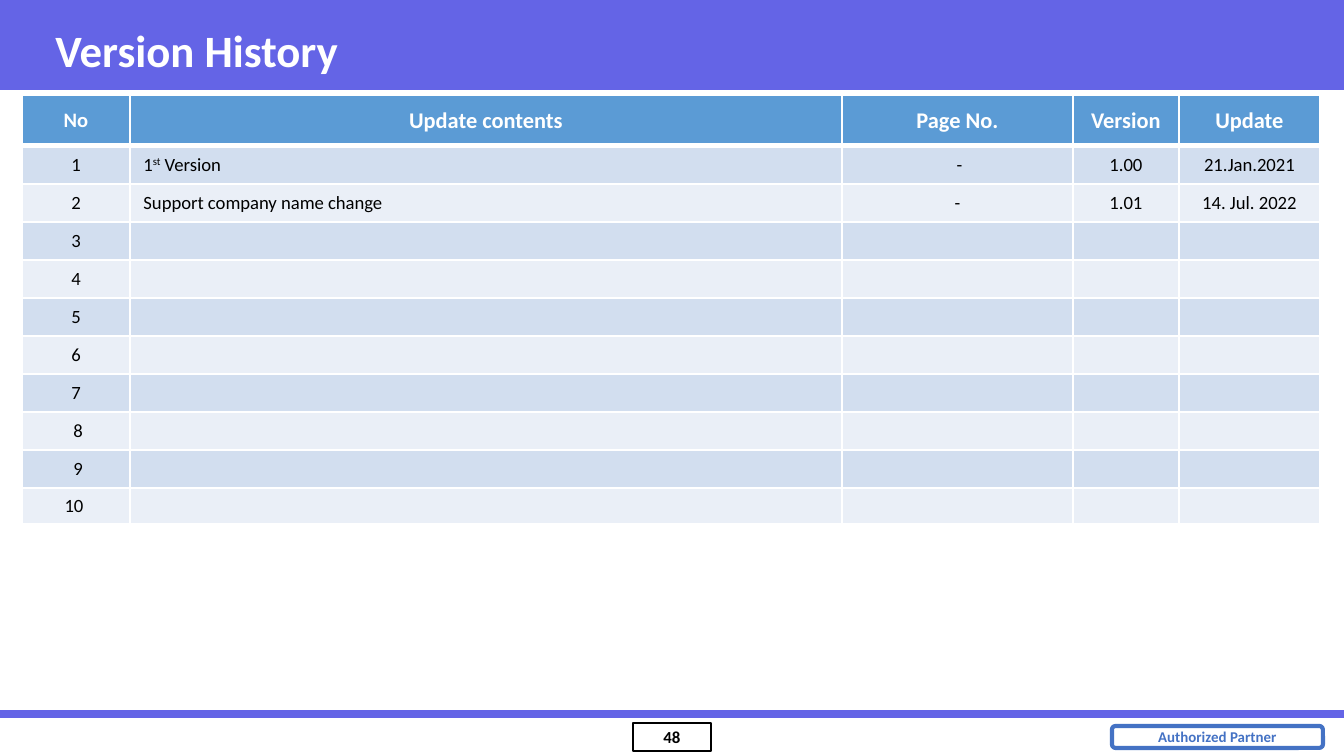
from lxml.etree import SubElement
from pptx import Presentation
from pptx.dml.color import RGBColor
from pptx.enum.shapes import MSO_CONNECTOR as Connector, MSO_SHAPE as Shape
from pptx.enum.text import MSO_ANCHOR as Anchor, MSO_AUTO_SIZE as AutoSize, PP_ALIGN as Align
from pptx.oxml import parse_xml
from pptx.oxml.ns import nsdecls, qn
from pptx.util import Emu, Pt

SLIDE_W, SLIDE_H = 1344, 756
FONT = "Calibri"
COLORS = {
    "violet": "6464E6",
    "white": "FFFFFF",
    "black": "000000",
    "partner": "4472C4",
    "heading": "5B9BD5",
    "odd": "D2DEEF",
    "even": "EAEFF7",
}
COLUMNS = [108, 712, 231, 106, 141]
ROWS = [51] + [38] * 9 + [35]
HEADINGS = ["No", "Update contents", "Page No.", "Version", "Update"]
NUMBERS = ["1", "2", "3", "4", "5", "6", "7", " 8", " 9", "10 "]
UPDATES = [
    [["1", ("st", 30), " Version"], " -", "1.00", "21.Jan.2021"],
    ["Support company name change", "-", "1.01", "14. Jul. 2022"],
]


def px(length):
    return Emu(round(length * 9144000 / SLIDE_W))


def rgb(name):
    return RGBColor.from_string(COLORS[name])


def write(frame, text, size=10, color="black", bold=False, align=Align.LEFT):
    paragraph = frame.paragraphs[0]
    paragraph.alignment = align
    for piece in text if isinstance(text, list) else [text]:
        wording, raised = piece if isinstance(piece, tuple) else (piece, 0)
        run = paragraph.add_run()
        run.text = wording
        run.font.name = FONT
        run.font.size = Pt(size)
        run.font.bold = bold
        run.font.color.rgb = rgb(color)
        if raised:
            run.font._element.set("baseline", str(raised * 1000))


def add_panel(slide, kind, box, fill=None, line=None, width=1):
    panel = slide.shapes.add_shape(kind, *map(px, box))
    panel.shadow.inherit = False
    if fill:
        panel.fill.solid()
        panel.fill.fore_color.rgb = rgb(fill)
    else:
        panel.fill.background()
    if line:
        panel.line.color.rgb = rgb(line)
        panel.line.width = Pt(width)
    else:
        panel.line.fill.background()
    panel.text_frame.vertical_anchor = Anchor.MIDDLE
    return panel


def add_header(slide, left, top, width, height):
    band = add_panel(slide, Shape.RECTANGLE, (left, top, width, height), fill="violet")
    title = slide.shapes.title
    title.left, title.top = px(left + 42), px(top + 11)
    title.width, title.height = px(width - 100), px(height - 12)
    frame = title.text_frame
    frame.auto_size = AutoSize.NONE
    frame.vertical_anchor = Anchor.MIDDLE
    write(frame, "Version History", size=24, color="white", bold=True)
    band.element.addnext(title.element)


def add_footer(slide, left, top, width):
    page = add_panel(slide, Shape.RECTANGLE, (left + width / 2 - 39, top + 9, 78, 28), line="black")
    frame = page.text_frame
    frame.margin_left = frame.margin_right = frame.margin_top = frame.margin_bottom = px(4)
    write(frame, "48", size=9, bold=True, align=Align.CENTER)

    rule = slide.shapes.add_connector(
        Connector.STRAIGHT, px(left), px(top), px(left + width), px(top)
    )
    rule.line.color.rgb = rgb("violet")
    rule.line.width = Pt(4.5)
    SubElement(rule.element.spPr, qn("a:effectLst"))

    partner = add_panel(
        slide, Shape.ROUNDED_RECTANGLE, (left + width - 232, top + 12, 211, 22),
        line="partner", width=2.25,
    )
    partner.text_frame.word_wrap = False
    write(partner.text_frame, "Authorized Partner", size=8, color="partner", bold=True, align=Align.CENTER)


def add_borders(cell, **widths):
    properties = cell._tc.get_or_add_tcPr()
    for index, side in enumerate("LRTB"):
        width = Pt(widths.get(side, 1))
        properties.insert(index, parse_xml(
            f'<a:ln{side} {nsdecls("a")} w="{width}"><a:solidFill>'
            f'<a:srgbClr val="{COLORS["white"]}"/></a:solidFill></a:ln{side}>'
        ))


def fill_cell(cell, text, fill, **text_format):
    cell.fill.solid()
    cell.fill.fore_color.rgb = rgb(fill)
    cell.vertical_anchor = Anchor.MIDDLE
    if text:
        write(cell.text_frame, text, **text_format)
    else:
        paragraph = cell.text_frame.paragraphs[0]
        SubElement(paragraph._p, qn("a:endParaRPr"), sz="1000")


def add_history(slide, left, top):
    table = slide.shapes.add_table(
        len(ROWS), len(COLUMNS), px(left), px(top), px(sum(COLUMNS)), px(sum(ROWS))
    ).table
    for column, width in zip(table.columns, COLUMNS):
        column.width = px(width)
    for row, height in zip(table.rows, ROWS):
        row.height = px(height)

    for c, heading in enumerate(HEADINGS):
        cell = table.cell(0, c)
        fill_cell(cell, heading, "heading", size=12 if c else 11, color="white", bold=True, align=Align.CENTER)
        add_borders(cell, B=3)

    for r, number in enumerate(NUMBERS, start=1):
        update = UPDATES[r - 1] if r <= len(UPDATES) else [""] * 4
        for c, text in enumerate([number] + update):
            cell = table.cell(r, c)
            align = Align.LEFT if c == 1 else Align.CENTER
            fill_cell(cell, text, "odd" if r % 2 else "even", align=align)
            add_borders(cell, T=3 if r == 1 else 1)


def main():
    deck = Presentation()
    deck.slide_width, deck.slide_height = px(SLIDE_W), px(SLIDE_H)
    slide = deck.slides.add_slide(deck.slide_layouts[5])
    add_header(slide, 0, 0, SLIDE_W, 90)
    add_footer(slide, 0, 714, SLIDE_W)
    add_history(slide, 22, 95)
    deck.save("out.pptx")


if __name__ == "__main__":
    main()
